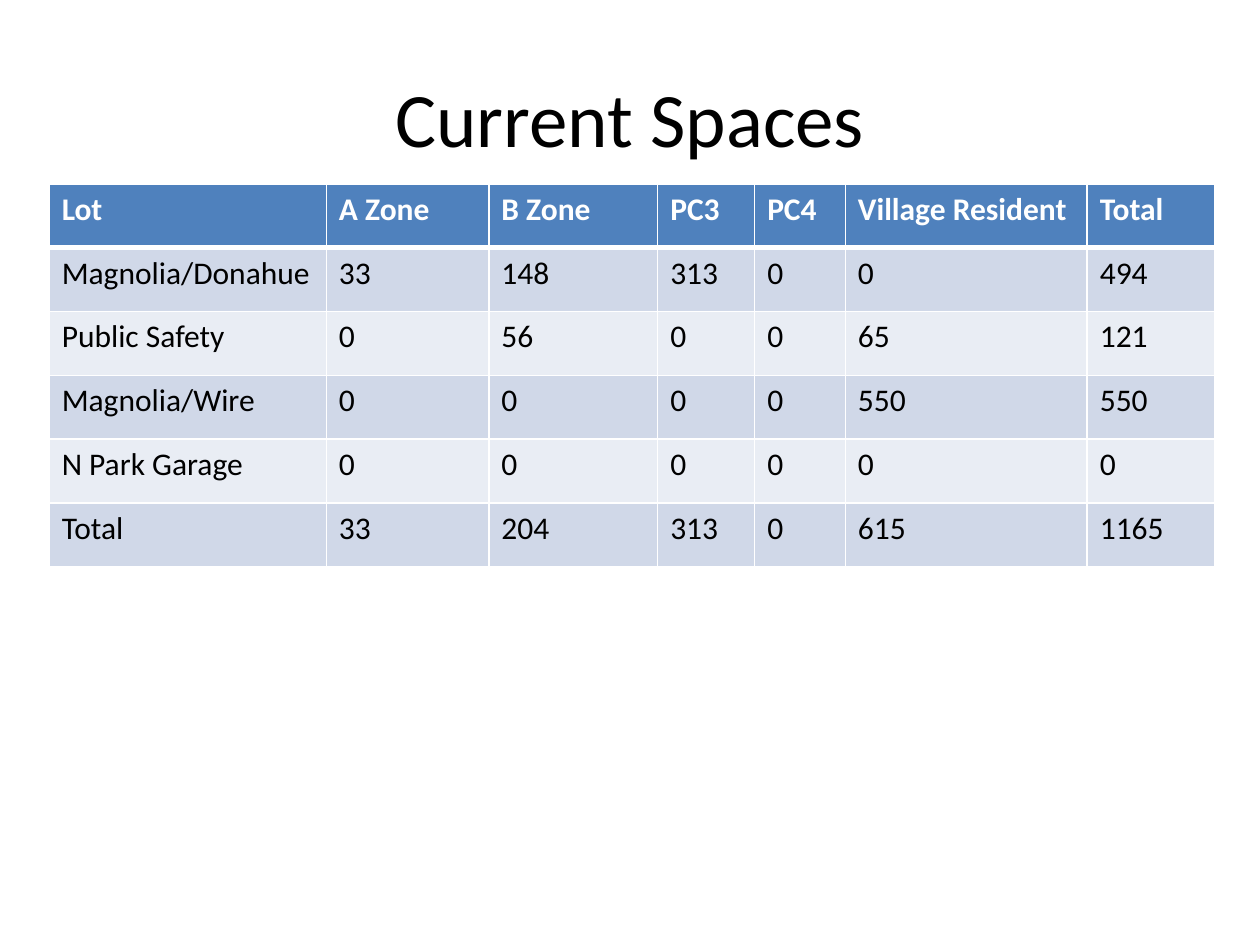
from dataclasses import dataclass

from lxml.etree import SubElement
from pptx import Presentation
from pptx.dml.color import RGBColor
from pptx.enum.text import MSO_ANCHOR, PP_ALIGN
from pptx.oxml.ns import qn
from pptx.util import Inches, Pt


@dataclass(frozen=True)
class Theme:
    font: str = "Calibri"
    title_size: int = 44
    table_size: int = 18
    text: str = "000000"
    light: str = "FFFFFF"
    header: str = "4F81BD"
    bands: tuple = ("D0D8E8", "E9EDF4")
    rule: float = 1
    header_rule: float = 3


THEME = Theme()

COLUMN_WIDTHS = (2.2, 1.29, 1.34, 0.77, 0.72, 1.92, 1.01)
ROWS = (
    ("Lot", "A Zone", "B Zone", "PC3", "PC4", "Village Resident", "Total"),
    ("Magnolia/Donahue", 33, 148, 313, 0, 0, 494),
    ("Public Safety", 0, 56, 0, 0, 65, 121),
    ("Magnolia/Wire", 0, 0, 0, 0, 550, 550),
    ("N Park Garage", 0, 0, 0, 0, 0, 0),
    ("Total", 33, 204, 313, 0, 615, 1165),
)


def style_text(para, size, color, bold=False):
    for span in para.runs:
        span.font.name = THEME.font
        span.font.size = Pt(size)
        span.font.bold = bold
        span.font.color.rgb = RGBColor.from_string(color)


def set_border(cell, side, width):
    properties = cell._tc.get_or_add_tcPr()
    line = SubElement(properties, qn(f"a:{side}"), w=str(Pt(width)))
    fill = SubElement(line, qn("a:solidFill"))
    SubElement(fill, qn("a:srgbClr"), val=THEME.light)


def style_cell(cell, row_index):
    is_header = row_index == 0
    # The heavy rule is shared by the header and the first body row
    heavy_side = {0: "lnB", 1: "lnT"}.get(row_index)
    for side in ("lnL", "lnR", "lnT", "lnB"):
        set_border(cell, side, THEME.header_rule if side == heavy_side else THEME.rule)
    fill_color = THEME.header if is_header else THEME.bands[(row_index - 1) % 2]
    cell.fill.solid()
    cell.fill.fore_color.rgb = RGBColor.from_string(fill_color)
    text_color = THEME.light if is_header else THEME.text
    style_text(cell.text_frame.paragraphs[0], THEME.table_size, text_color, is_header)


def add_title(page, text, left, top, width, height):
    box = page.shapes.add_textbox(left, top, width, height)
    frame = box.text_frame
    frame.word_wrap = True
    frame.vertical_anchor = MSO_ANCHOR.MIDDLE
    frame.text = text
    para = frame.paragraphs[0]
    para.alignment = PP_ALIGN.CENTER
    style_text(para, THEME.title_size, THEME.text)


def add_spaces_table(page, left, top, width, height):
    frame = page.shapes.add_table(len(ROWS), len(COLUMN_WIDTHS), left, top, width, height)
    table = frame.table
    for column, share in zip(table.columns, COLUMN_WIDTHS):
        column.width = int(width * share / sum(COLUMN_WIDTHS))
    for row_index, values in enumerate(ROWS):
        for column_index, value in enumerate(values):
            cell = table.cell(row_index, column_index)
            cell.text_frame.text = str(value)
            style_cell(cell, row_index)


def main():
    deck = Presentation()
    deck.slide_width, deck.slide_height = Inches(10), Inches(7.5)
    page = deck.slides.add_slide(deck.slide_layouts[6])

    # Title
    add_title(page, "Current Spaces", Inches(0.5), Inches(0.3), Inches(9), Inches(1.25))

    # Parking spaces by lot and permit zone
    add_spaces_table(page, Inches(0.39), Inches(1.46), Inches(9.25), Inches(3.04))

    deck.save("out.pptx")


if __name__ == "__main__":
    main()
